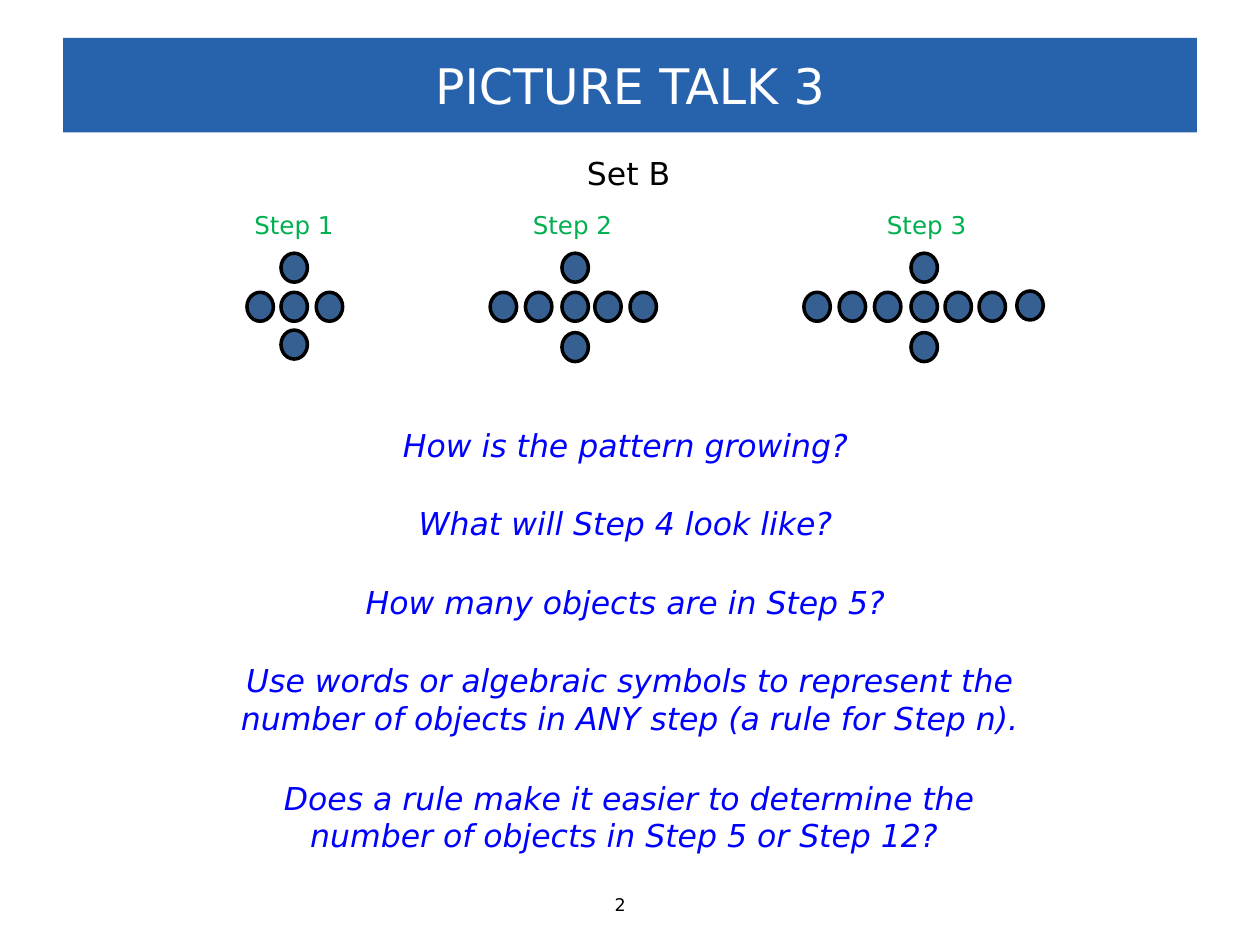
from pptx import Presentation
from pptx.dml.color import RGBColor
from pptx.enum.shapes import MSO_SHAPE as Shape
from pptx.enum.text import MSO_ANCHOR as Anchor, MSO_AUTO_SIZE as Fit, PP_ALIGN as Align
from pptx.util import Inches, Pt

FONT = "DejaVu Sans"
ROW = 2.32   # top of the horizontal row of dots
TOP = 2.01   # top of the dot above it

# label, label left, centre dot left, bottom dot top, other dots of the row
STEPS = [
    ("Step 1", 1.92, 2.23, 2.62, [(1.96, ROW), (2.51, ROW)]),
    ("Step 2", 4.13, 4.46, 2.64,
     [(x, ROW) for x in (3.89, 4.17, 4.72, 5)]),
    ("Step 3", 6.94, 7.23, 2.64,
     [(x, ROW) for x in (6.38, 6.66, 6.94, 7.5, 7.77)] + [(8.07, 2.31)]),
]

# left, top, width, height, text; the end space takes part in the centring
ASKS = [
    (2.97, 3.33, 4.07, 0.4, "How is the pattern growing? "),
    (3.11, 3.95, 3.79, 0.4, "What will Step 4 look like? "),
    (2.77, 4.58, 4.47, 0.4, "How many objects are in Step 5? "),
    (1.65, 5.2, 6.7, 0.71, "Use words or algebraic symbols to represent the "
                           "number of objects in ANY step (a rule for Step n)."),
    (2.08, 6.13, 5.83, 0.71, "Does a rule make it easier to determine the "
                             "number of objects in Step 5 or Step 12? "),
]


def color(code):
    return RGBColor.from_string(code)


def write(frame, text, size=18, ink="000000", align=Align.LEFT, italic=False):
    para = frame.paragraphs[0]
    para.alignment = align
    run = para.add_run()
    run.text = text
    font = run.font
    font.name, font.size, font.italic = FONT, Pt(size), italic
    font.color.rgb = color(ink)


def add_text(shapes, box, text, wrap=True, **form):
    frame = shapes.add_textbox(*map(Inches, box)).text_frame
    frame.word_wrap = wrap
    frame.auto_size = Fit.SHAPE_TO_FIT_TEXT
    write(frame, text, **form)


def add_title(slide, text):
    title = slide.shapes.title
    title.left, title.top = Inches(0.5), Inches(0.3)
    title.width, title.height = Inches(9), Inches(0.75)
    title.fill.solid()
    title.fill.fore_color.rgb = color("2762AD")
    title.text_frame.vertical_anchor = Anchor.MIDDLE
    write(title.text_frame, text, size=28, ink="FFFFFF", align=Align.CENTER)


def add_dot(shapes, left, top):
    dot = shapes.add_shape(Shape.OVAL, Inches(left), Inches(top),
                           Inches(0.21), Inches(0.23))
    dot.shadow.inherit = False
    dot.fill.solid()
    dot.fill.fore_color.rgb = color("376092")
    dot.line.color.rgb = color("000000")
    dot.line.width = Pt(2)


def add_step(slide, label, left, mid, low, sides):
    shapes = slide.shapes.add_group_shape().shapes
    for spot in [(mid, TOP), (mid, ROW), (mid, low)] + sides:
        add_dot(shapes, *spot)
    add_text(shapes, (left, 1.62, 0.88, 0.34), label, size=14, ink="00B050")


def main():
    deck = Presentation()
    deck.slide_width, deck.slide_height = Inches(10), Inches(7.5)
    slide = deck.slides.add_slide(deck.slide_layouts[5])
    shapes = slide.shapes

    # Heading and page number
    add_title(slide, "PICTURE TALK 3")
    add_text(shapes, (4.56, 1.17, 0.89, 0.4), "Set B", wrap=False)
    add_text(shapes, (4.78, 7.05, 0.44, 0.27), "2", wrap=False, size=10)

    # Growing dot pattern
    for step in STEPS:
        add_step(slide, *step)

    # Questions
    for *box, text in ASKS:
        add_text(shapes, box, text, ink="0000FF", align=Align.CENTER, italic=True)

    deck.save("out.pptx")


if __name__ == "__main__":
    main()
